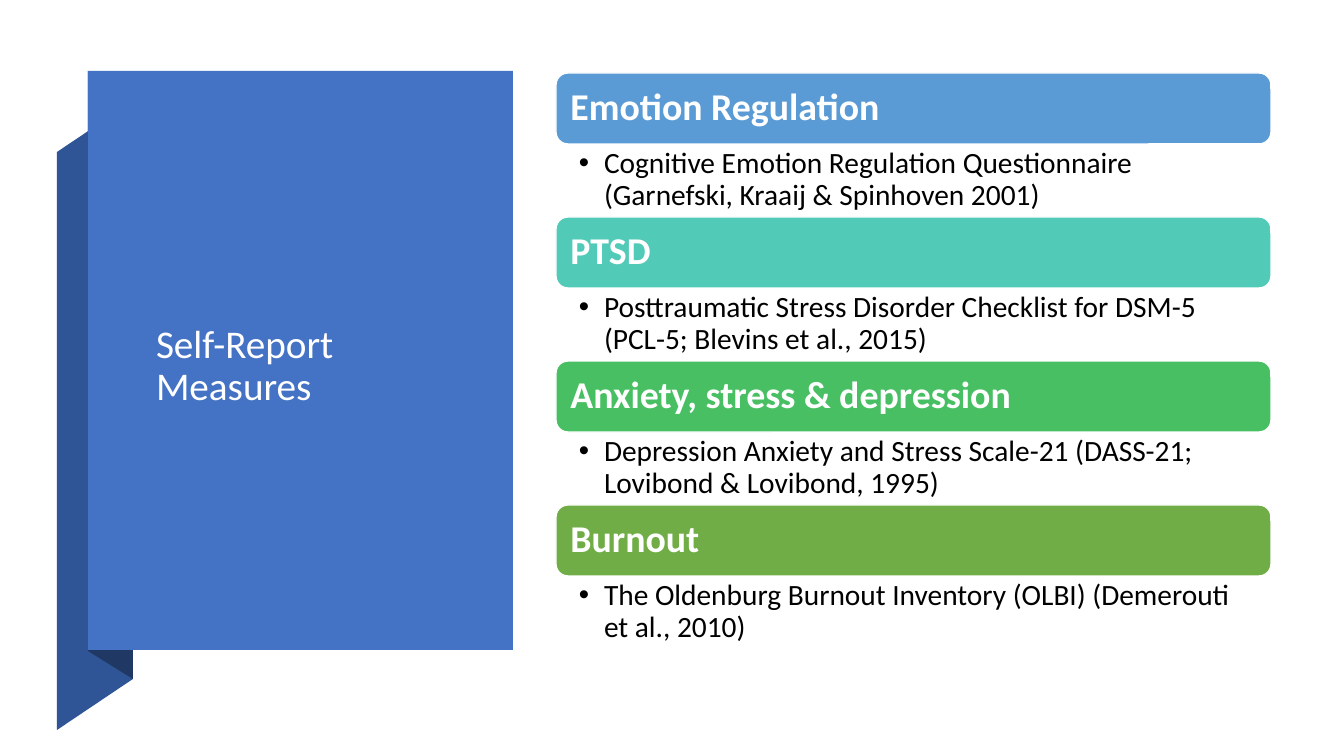
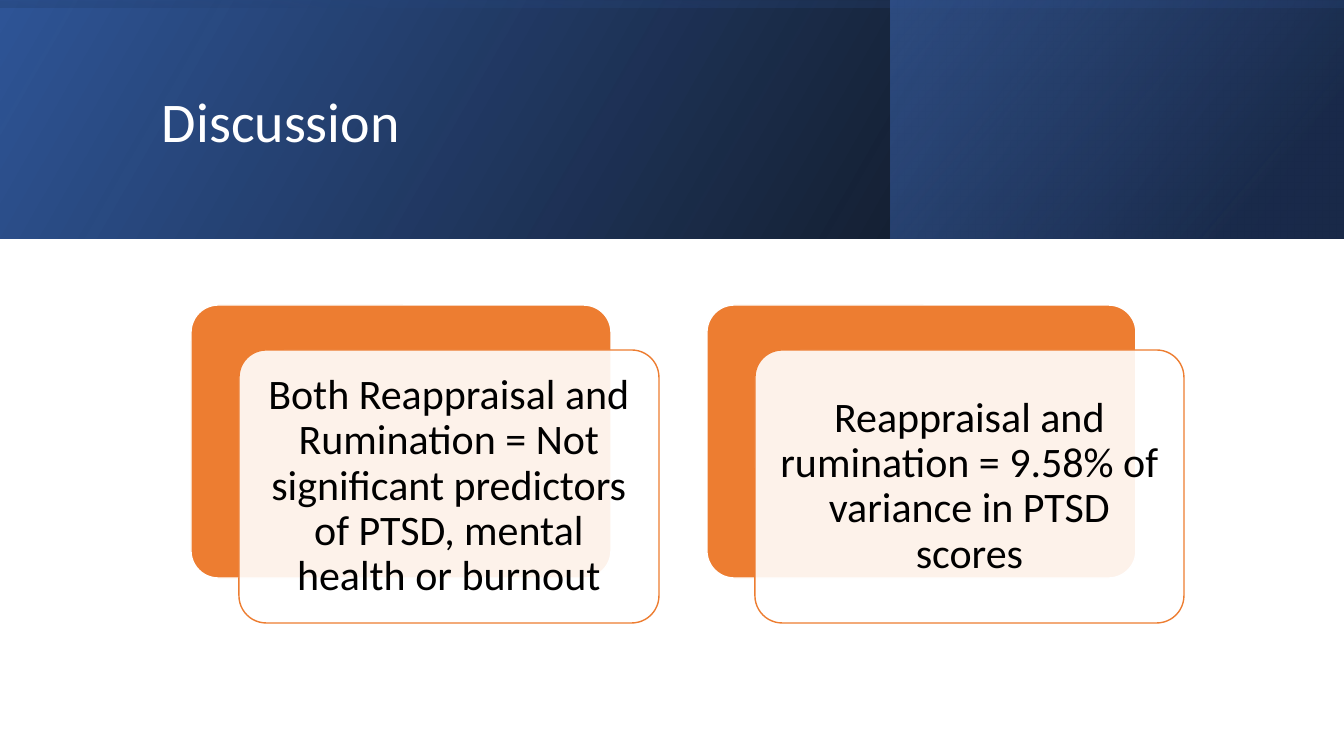
from lxml import etree
from pptx import Presentation
from pptx.dml.color import RGBColor
from pptx.enum.shapes import MSO_SHAPE
from pptx.enum.text import MSO_ANCHOR, MSO_AUTO_SIZE, PP_ALIGN
from pptx.oxml.ns import qn
from pptx.util import Pt

RECT, ROUND = MSO_SHAPE.RECTANGLE, MSO_SHAPE.ROUNDED_RECTANGLE
TOP, MID = MSO_ANCHOR.TOP, MSO_ANCHOR.MIDDLE
LEFT, MIDDLE = PP_ALIGN.LEFT, PP_ALIGN.CENTER
FIXED = MSO_AUTO_SIZE.NONE

# Content
SCALES = [
    ("Emotion Regulation", "5B9BD5",
     "Cognitive Emotion Regulation Questionnaire (Garnefski, Kraaij & Spinhoven 2001)"),
    ("PTSD", "52CAB8",
     "Posttraumatic Stress Disorder Checklist for DSM-5 (PCL-5; Blevins et al., 2015)"),
    ("Anxiety, stress & depression", "49BF64",
     "Depression Anxiety and Stress Scale-21 (DASS-21; Lovibond & Lovibond, 1995)"),
    ("Burnout", "70AD47",
     "The Oldenburg Burnout Inventory (OLBI) (Demerouti et al., 2010)"),
]
# Left edge, width, text
CARDS = [
    (191, 420, "Both Reappraisal and Rumination = Not significant predictors "
               "of PTSD, mental health or burnout"),
    (707, 429, "Reappraisal and rumination = 9.58% of variance in PTSD scores"),
]
# Colour and outline of each ribbon part
FOLDS = [
    ("2F5597", [(57, 730), (133, 679), (133, 101), (57, 152)]),
    ("203864", [(88, 651), (133, 679), (133, 100), (88, 71)]),
]
# Box, rotation, angle, stops (position, colour, opacity)
BANDS = [
    ((0, 0, 1344, 239), 0, 330, [(0, "000000", 96), (100, "2F5597", 100)]),
    ((891, 0, 452, 239), 0, 320, [(19, "203864", 68), (100, "4472C4", 48)]),
    ((552, -552, 239, 1344), 270, 350, [(23, "2F5597", 16), (99, "000000", 45)]),
]

# Shared style
FONT, WHITE, BLACK = "Calibri", "FFFFFF", "000000"
BLUE, ORANGE = "4472C4", "ED7D31"
SCALE = 914400 / 100.8


def px(n):
    return round(n * SCALE)


def rgb(code):
    return RGBColor.from_string(code)


def sub(node, tag, **attrs):
    return etree.SubElement(node, qn(tag), **attrs)


def paint(shape, fill, line=None):
    shape.shadow.inherit = False
    shape.fill.solid()
    shape.fill.fore_color.rgb = rgb(fill)
    if line:
        shape.line.color.rgb = rgb(line)
        shape.line.width = Pt(1)
    else:
        shape.line.fill.background()


def block(slide, kind, box, fill, line=None):
    shape = slide.shapes.add_shape(kind, *map(px, box))
    paint(shape, fill, line)
    return shape


def write(shape, text, size, color, bold=False, align=LEFT, anchor=MID,
          pads=(10, 5, 10, 5)):
    frame = shape.text_frame
    frame.word_wrap, frame.auto_size = True, FIXED
    frame.vertical_anchor = anchor
    (frame.margin_left, frame.margin_top,
     frame.margin_right, frame.margin_bottom) = map(px, pads)
    para = frame.paragraphs[0]
    para.alignment, para.line_spacing = align, 0.9
    run = para.add_run()
    run.text = text
    font = run.font
    font.name, font.size, font.bold = FONT, Pt(size), bold
    font.color.rgb = rgb(color)
    return para


def bullet(para, gap):
    props = para._p.get_or_add_pPr()
    props.set("marL", str(px(gap)))
    props.set("indent", str(-px(gap)))
    sub(props, "a:buFont", typeface="Arial")
    sub(props, "a:buChar", char="•")


def fade(shape, angle, stops):
    props = shape.element.spPr
    grad = etree.Element(qn("a:gradFill"), rotWithShape="1")
    row = sub(grad, "a:gsLst")
    for pos, code, alpha in stops:
        stop = sub(row, "a:gs", pos=str(pos * 1000))
        tint = sub(stop, "a:srgbClr", val=code)
        sub(tint, "a:alpha", val=str(alpha * 1000))
    sub(grad, "a:lin", ang=str(angle * 60000), scaled="0")
    solid = props.find(qn("a:solidFill"))
    props.replace(solid, grad)
    props.find(qn("a:xfrm")).set("flipH", "1")


def head(slide, text, box, size):
    title = slide.shapes.title
    title.left, title.top, title.width, title.height = map(px, box)
    write(title, text, size, WHITE)
    slide.shapes._spTree.append(title.element)  # bring to front


deck = Presentation()
deck.slide_width, deck.slide_height = px(1344), px(756)
layout = deck.slide_layouts[5]

# Slide 1: ribbon panel and title
slide = deck.slides.add_slide(layout)
for color, spots in FOLDS:
    form = slide.shapes.build_freeform(*spots[0], scale=SCALE)
    form.add_line_segments(spots[1:], close=True)
    paint(form.convert_to_shape(), color)
block(slide, RECT, (88, 71, 425, 579), BLUE)
head(slide, "Self-Report Measures", (146, 168, 303, 397), 28)

# Slide 1: measures
X, Y, WIDE, BAR, NOTE = 556, 73, 715, 71, 73
for i, (name, color, note) in enumerate(SCALES):
    y = Y + i * (BAR + NOTE)
    bar = block(slide, ROUND, (X, y, WIDE, BAR), color, WHITE)
    write(bar, name, 27, WHITE, bold=True, pads=(11,) * 4)
    box = slide.shapes.add_textbox(*map(px, (X, y + BAR, WIDE, NOTE)))
    para = write(box, note, 21, BLACK, anchor=TOP, pads=(23, 4, 21, 4))
    bullet(para, 25)

# Slide 2: header bands and title
slide = deck.slides.add_slide(layout)
for box, turn, angle, stops in BANDS:
    band = block(slide, RECT, box, BLUE)
    band.rotation = turn
    fade(band, angle, stops)
head(slide, "Discussion", (152, 38, 1072, 173), 40)

# Slide 2: layered cards
TOP_Y, TALL, DX, DY = 305, 273, 48, 45
for x, wide, text in CARDS:
    back = block(slide, ROUND, (x, TOP_Y, wide, TALL), ORANGE, WHITE)
    card = block(slide, ROUND, (x + DX, TOP_Y + DY, wide, TALL), WHITE, ORANGE)
    for shape in (back, card):
        shape.adjustments[0] = 0.1
    tint = card.element.spPr.find(qn("a:solidFill"))[0]
    sub(tint, "a:alpha", val="90000")
    write(card, text, 30, BLACK, align=MIDDLE, pads=(12,) * 4)

deck.save("out.pptx")
